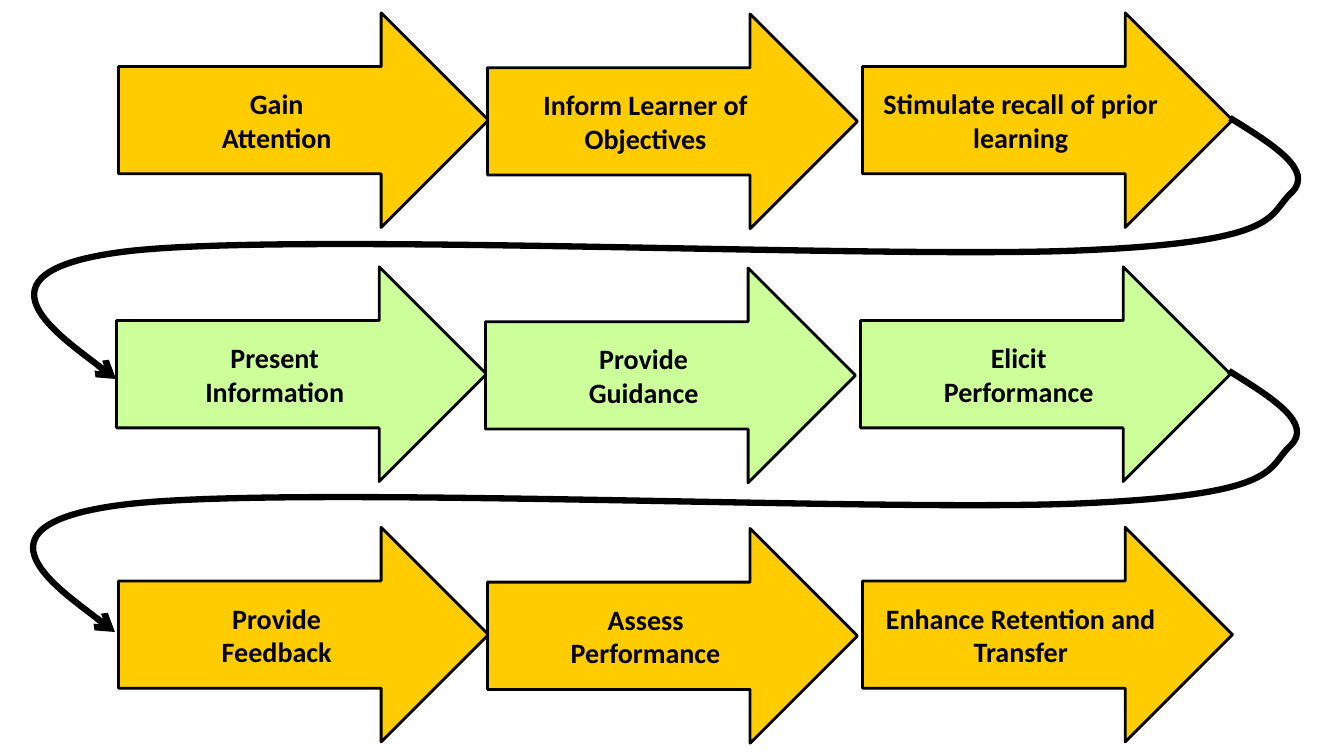
from lxml.etree import SubElement
from pptx import Presentation
from pptx.dml.color import RGBColor
from pptx.enum.shapes import MSO_SHAPE as Shape
from pptx.enum.text import MSO_ANCHOR as Anchor, PP_ALIGN as Align
from pptx.oxml.ns import qn
from pptx.util import Inches, Pt

BLACK = RGBColor(0x00, 0x00, 0x00)
GOLD = RGBColor(0xFF, 0xCC, 0x00)
GREEN = RGBColor(0xCC, 0xFF, 0x99)

# All lengths are percent of the slide's width (x) or height (y).
WIDE, HIGH = 27.53, 28.4
COLS = [(8.82, 1.7), (36.27, 1.86), (64.18, 1.7)]
ROWS = [
    (0, 0, GOLD, ["Gain\nAttention", "Inform Learner of Objectives",
                  "Stimulate recall of prior learning"]),
    (-0.15, 33.6, GREEN, ["Present\nInformation", "Provide\nGuidance",
                          "Elicit\nPerformance"]),
    (0, 68.05, GOLD, ["Provide\nFeedback", "Assess\nPerformance",
                      "Enhance Retention and Transfer"]),
]
START = (91.52, 15.6)
BENDS = [
    [(94.67, 19.07), (97.82, 22.53), (96.1, 25.47)],
    [(94.3, 28.4), (95.57, 31.87), (81.1, 33.07)],
    [(66.54, 34.4), (21.16, 30.53), (9.08, 33.33)],
    [(-3, 36.13), (8.63, 50.13), (8.63, 50.13)],
]
NEAR, FAR = (3.6, 15.6), (96.55, 50.13)
LOOPS = [(0, 0), (-0.08, 33.47)]


def write(frame, text, font="Calibri", size=20, color=BLACK, bold=True,
          align=Align.CENTER):
    frame.word_wrap = True
    frame.vertical_anchor = Anchor.MIDDLE
    frame.text = text
    for para in frame.paragraphs:
        para.alignment = align
        for run in para.runs:
            run.font.name, run.font.size = font, Pt(size)
            run.font.bold = bold
            run.font.color.rgb = color


class Chart:
    """Holds the slide and its line style."""

    def __init__(self, deck, ink=BLACK):
        self.deck, self.ink = deck, ink
        self.slide = deck.slides.add_slide(deck.slide_layouts[6])

    def place(self, x, y):
        """Turn percent of the slide into slide units."""
        return (round(self.deck.slide_width * x / 100),
                round(self.deck.slide_height * y / 100))

    def trim(self, shape, width):
        shape.shadow.inherit = False
        shape.line.color.rgb = self.ink
        shape.line.width = Pt(width)

    def arrow(self, x, y, fill, text):
        shape = self.slide.shapes.add_shape(
            Shape.RIGHT_ARROW, *self.place(x, y), *self.place(WIDE, HIGH))
        shape.fill.solid()
        shape.fill.fore_color.rgb = fill
        self.trim(shape, 2)
        write(shape.text_frame, text)

    def loop(self, dx, dy):
        """Frame a freeform by its corners, then give it smooth curves."""
        near, far = [self.place(x + dx, y + dy) for x, y in (NEAR, FAR)]
        pen = self.slide.shapes.build_freeform(*near)
        pen.add_line_segments([far], close=False)
        shape = pen.convert_to_shape()
        route = next(shape.element.iter(qn("a:path")))
        for child in list(route):
            route.remove(child)
        for tag, points in [("a:moveTo", [START]),
                            *(("a:cubicBezTo", bend) for bend in BENDS)]:
            part = SubElement(route, qn(tag))
            for point in points:
                x, y = self.place(point[0] - NEAR[0], point[1] - NEAR[1])
                SubElement(part, qn("a:pt"), x=str(x), y=str(y))
        shape.fill.background()
        self.trim(shape, 4.5)
        line = shape.element.spPr.find(qn("a:ln"))
        SubElement(line, qn("a:tailEnd"), type="arrow")


def main():
    deck = Presentation()
    deck.slide_width, deck.slide_height = Inches(13.33), Inches(7.5)
    chart = Chart(deck)
    for dx, dy, fill, steps in ROWS:
        for (x, y), text in zip(COLS, steps):
            chart.arrow(x + dx, y + dy, fill, text)
    for dx, dy in LOOPS:
        chart.loop(dx, dy)
    deck.save("out.pptx")


if __name__ == "__main__":
    main()
